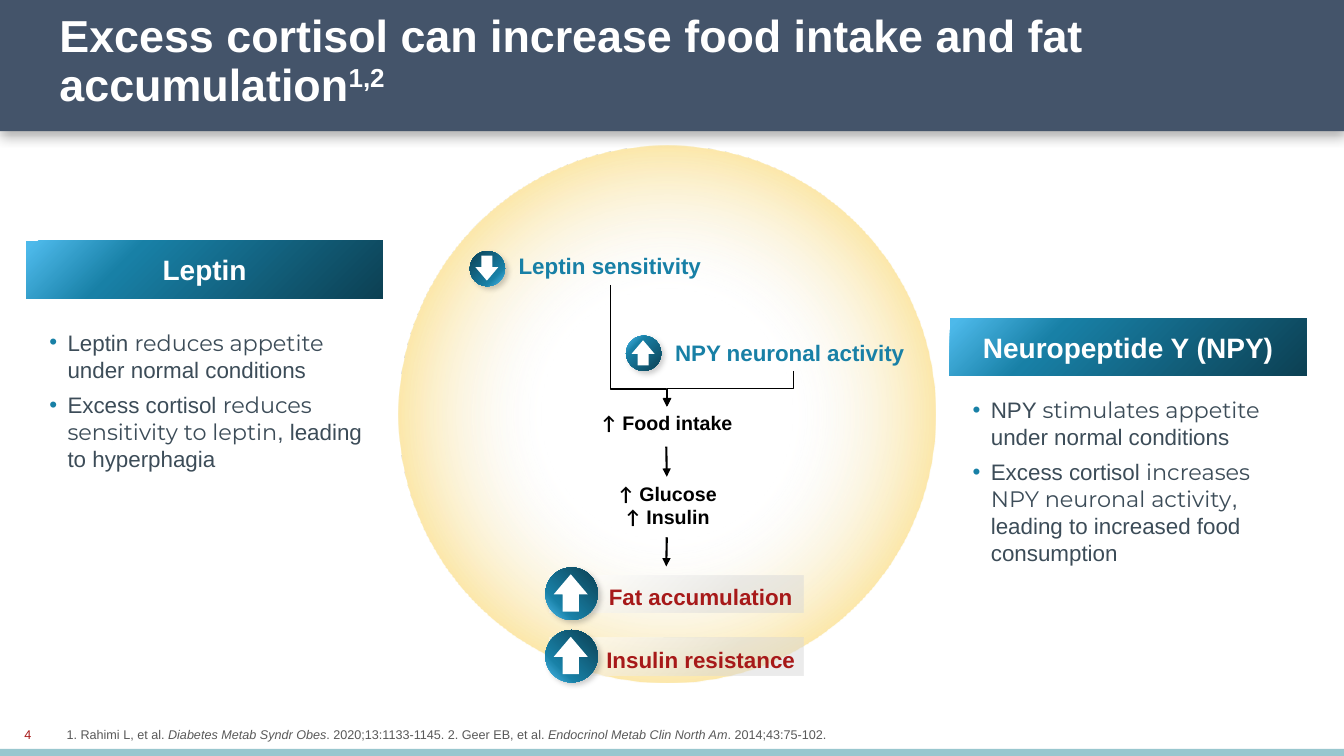
import dataclasses
import typing

import lxml.etree
import pptx
import pptx.dml.color
import pptx.enum.shapes
import pptx.enum.text
import pptx.oxml.ns
import pptx.util

KIND = pptx.enum.shapes.MSO_SHAPE
LINK = pptx.enum.shapes.MSO_CONNECTOR
ALIGN = pptx.enum.text.PP_ALIGN
ANCHOR = pptx.enum.text.MSO_ANCHOR
COLS, ROWS = 133.33, 75
TEAL, RED, SLATE, WHITE, BLACK = "1880A6", "A71919", "3C4C58", "FFFFFF", "000000"

deck = pptx.Presentation()
deck.slide_width = pptx.util.Inches(13.33)
deck.slide_height = pptx.util.Inches(7.5)
slide = deck.slides.add_slide(deck.slide_layouts[6])


class Box(typing.NamedTuple):
    x: float
    y: float
    w: float
    h: float


class Run(typing.NamedTuple):
    text: str
    face: str = "Arial"
    italic: bool = False
    raised: bool = False


class Stop(typing.NamedTuple):
    place: int
    tint: str
    alpha: int = 100


class Shade(typing.NamedTuple):
    alpha: int
    blur: int
    dist: int
    angle: int


@dataclasses.dataclass
class Card:
    title: str
    x: float
    y: float
    pad: float
    drop: float
    points: list[list[Run]]


@dataclasses.dataclass
class Badge:
    x: float
    y: float
    size: float
    turn: int = 0
    flip: bool = False


BLEND = [Stop(2, "4DB9EA"), Stop(29, TEAL), Stop(100, "0C4053")]
GLOW = [Stop(33, "F2F2F2", 0), Stop(100, "FFC000")]
MIST = [Stop(32, "D9D9D9", 50), Stop(83, WHITE, 50)]


def col(n: float) -> int:
    return round(deck.slide_width * n / COLS)


def row(n: float) -> int:
    return round(deck.slide_height * n / ROWS)


def place(box: Box) -> tuple[int, int, int, int]:
    return col(box.x), row(box.y), col(box.w), row(box.h)


def color(code: str) -> pptx.dml.color.RGBColor:
    return pptx.dml.color.RGBColor.from_string(code)


def node(root, tag: str, **attrs):
    return lxml.etree.SubElement(root, pptx.oxml.ns.qn("a:" + tag), {k: str(v) for k, v in attrs.items()})


def tint(root, code: str, alpha: int = 100) -> None:
    item = node(root, "srgbClr", val=code)
    if alpha < 100:
        node(item, "alpha", val=alpha * 1000)


def blend(shape, stops: list[Stop], radial: bool) -> None:
    shape.fill.background()
    props = shape._element.spPr
    grad = node(props, "gradFill", rotWithShape=1)
    chain = node(grad, "gsLst")
    for stop in stops:
        tint(node(chain, "gs", pos=stop.place * 1000), stop.tint, stop.alpha)
    if radial:
        half = dict.fromkeys("ltrb", 50000)
        node(node(grad, "path", path="circle"), "fillToRect", **half)
    else:
        node(grad, "lin", ang=45 * 60000, scaled=0)
    props.replace(props.find(pptx.oxml.ns.qn("a:noFill")), grad)


def draw(kind, box: Box, fill: str | list[Stop], radial: bool = False, turn: int = 0, flip: bool = False,
         tweaks: tuple[float, ...] = (), shade: Shade | None = None):
    shape = slide.shapes.add_shape(kind, *place(box))
    for n, value in enumerate(tweaks):
        shape.adjustments[n] = value
    shape.rotation = turn
    if flip:
        shape._element.spPr.xfrm.set("flipV", "1")
    if isinstance(fill, str):
        shape.fill.solid()
        shape.fill.fore_color.rgb = color(fill)
    else:
        blend(shape, fill, radial)
    shape.line.fill.background()
    shape.shadow.inherit = False
    if shade:
        cast = node(shape._element.spPr.find(pptx.oxml.ns.qn("a:effectLst")), "outerShdw",
                    blurRad=shade.blur * 12700, dist=shade.dist * 12700, dir=shade.angle * 60000,
                    algn="t", rotWithShape=0)
        tint(cast, BLACK, shade.alpha)
    return shape


def write(box: Box, paras: list[list[Run]], size: int = 16, ink: str = BLACK, bold: bool = False, align=ALIGN.LEFT,
          anchor=ANCHOR.TOP, wrap: bool = True, pitch: float = 1, inset: float = 1, dot: bool = False):
    label = slide.shapes.add_textbox(*place(box))
    frame = label.text_frame
    frame.word_wrap = wrap
    frame.vertical_anchor = anchor
    frame.margin_left = col(inset)
    for n, runs in enumerate(paras):
        para = frame.paragraphs[0] if n == 0 else frame.add_paragraph()
        para.alignment = align
        para.line_spacing = pitch
        if n:
            para.space_before = pptx.util.Pt(6)
        if dot:
            props = para._p.get_or_add_pPr()
            props.set("marL", str(col(1.8)))
            props.set("indent", str(-col(1.8)))
            tint(node(props, "buClr"), TEAL)
            node(props, "buFont", typeface="Arial")
            node(props, "buChar", char="•")
        for part in runs:
            if part.text == "\n":
                para.add_line_break()
                continue
            run = para.add_run()
            run.text = part.text
            font = run.font
            font.name, font.size, font.bold, font.italic = part.face, pptx.util.Pt(size), bold, part.italic
            font.color.rgb = color(ink)
            if part.raised:
                run._r.get_or_add_rPr().set("baseline", "30000")
    return label


def join(kind, start, end=None, stop: tuple[float, float] = (0, 0), width: float = 1.5):
    link = slide.shapes.add_connector(kind, 0, 0, col(stop[0]), row(stop[1]))
    link.begin_connect(start, 2)
    if end is not None:
        link.end_connect(end, 0)
    link.line.color.rgb = color(BLACK)
    link.line.width = pptx.util.Pt(width)
    node(link.line._get_or_add_ln(), "tailEnd", type="triangle")
    node(link._element.spPr, "effectLst")
    return link


def bend(start, end, box: Box, turn: int, flip: bool, knee: float) -> None:
    link = join(LINK.ELBOW, start, end, width=1)
    link.left, link.top, link.width, link.height = place(box)
    props = link._element.spPr
    props.xfrm.set("rot", str(turn * 60000))
    props.xfrm.set("flipH", str(int(flip)))
    props.xfrm.set("flipV", "0")
    rules = props.prstGeom.get_or_add_avLst()
    node(rules, "gd", name="adj1", fmla=f"val {round(knee * 100000)}")


def stamp(badge: Badge) -> None:
    x, y, size = badge.x, badge.y, badge.size
    draw(KIND.OVAL, Box(x, y, size, size), BLEND, turn=badge.turn, flip=badge.flip, shade=Shade(20, 4, 3, 45))
    draw(KIND.UP_ARROW, Box(x + 0.16 * size, y + 0.13 * size, 0.65 * size, 0.71 * size), WHITE,
         turn=badge.turn, tweaks=(0.475, 0.59))


def panel(card: Card) -> None:
    x, y = card.x, card.y
    draw(KIND.SNIP_2_DIAG_RECTANGLE, Box(x, y, 35.4, 25.7), WHITE, tweaks=(0.105, 0))
    draw(KIND.RECTANGLE, Box(x, y, 35.4, 5.7), BLEND)
    write(Box(x - 1.7, y + card.drop, 36.6, 17), card.points, ink=SLATE, anchor=ANCHOR.MIDDLE, inset=4, dot=True)
    write(Box(x + card.pad, y + 0.7, 35.4 - 2 * card.pad, 4.4), [[Run(card.title)]],
          size=20, ink=WHITE, bold=True, align=ALIGN.CENTER)


CARDS = [
    Card("Leptin", 2.6, 23.9, 7.1, 7.3, [
        [Run("Leptin "), Run("reduces appetite ", "Montserrat"), Run("under normal conditions")],
        [Run("Excess cortisol "), Run("reduces sensitivity to leptin", "Montserrat"),
         Run(", leading to hyperphagia")]]),
    Card("Neuropeptide Y (NPY)", 94.2, 31.6, 1.6, 7.6, [
        [Run("NPY "), Run("stimulates appetite ", "Montserrat"), Run("under normal conditions")],
        [Run("Excess cortisol "), Run("increases NPY neuronal activity", "Montserrat"),
         Run(", leading to increased food consumption")]]),
]
RISE = Run("↑ ", "Calibri")
MID = dict(bold=True, align=ALIGN.CENTER)

draw(KIND.RECTANGLE, Box(0, -0.1, COLS, 13.1), "44546A", shade=Shade(30, 8, 4, 90))
draw(KIND.RECTANGLE, Box(0, 74.3, COLS, 0.7), "99C7CF")
write(Box(4.9, 0.9, 122.4, 10.6),
      [[Run("Excess cortisol can increase food intake and fat accumulation"), Run("1,2", raised=True)]],
      size=32, ink=WHITE, bold=True, anchor=ANCHOR.BOTTOM, pitch=0.9)
write(Box(0.1, 70.9, 4, 4), [[Run("4")]], size=9, ink=RED, align=ALIGN.RIGHT, anchor=ANCHOR.MIDDLE)
write(Box(5.6, 68.4, 110.4, 5.7),
      [[Run("1. Rahimi L, et al. "), Run("Diabetes Metab Syndr Obes", italic=True),
        Run(". 2020;13:1133-1145. 2. Geer EB, et al. "), Run("Endocrinol Metab Clin North Am", italic=True),
        Run(". 2014;43:75-102.")]], size=9, ink="595959", anchor=ANCHOR.BOTTOM)

draw(KIND.OVAL, Box(39.5, 14.4, 53.3, 53.3), GLOW, radial=True)
food = write(Box(52.8, 40.3, 26.6, 4), [[RISE, Run("Food intake")]], size=14, wrap=False, **MID)
sugar = write(Box(55.7, 47.3, 20.9, 6), [[RISE, Run("Glucose"), Run("\n"), RISE, Run("Insulin")]],
              size=14, wrap=False, **MID)
leptin = write(Box(50.3, 24.5, 20.4, 3.7), [[Run("Leptin sensitivity")]], ink=TEAL, wrap=False, **MID)
nerve = write(Box(65.8, 33.2, 25.7, 3.7), [[Run("NPY neuronal activity ")]], ink=TEAL, wrap=False, **MID)
for card in CARDS:
    panel(card)
join(LINK.STRAIGHT, food, sugar)
bend(leptin, food, Box(57.3, 31.5, 12.1, 5.6), 270, True, 0.855)
bend(nerve, food, Box(70.7, 32.3, 3.5, 12.5), 90, False, 0.5)
join(LINK.STRAIGHT, sugar, stop=(66.1, 56.2))
for n, name in enumerate(["Fat accumulation", "Insulin resistance"]):
    y = 57.1 + 6.2 * n
    draw(KIND.RECTANGLE, Box(54.5, y, 25.2, 3.7), MIST, turn=180)
    write(Box(57.4, y + 0.1, 24.2, 3.7), [[Run(name)]], ink=RED, pitch=1.07, **MID)
    stamp(Badge(54.1, y - 0.8, 5.2, flip=True))
stamp(Badge(46.6, 24.9, 3.5, turn=180))
stamp(Badge(62.1, 33.3, 3.5))

deck.save("out.pptx")
